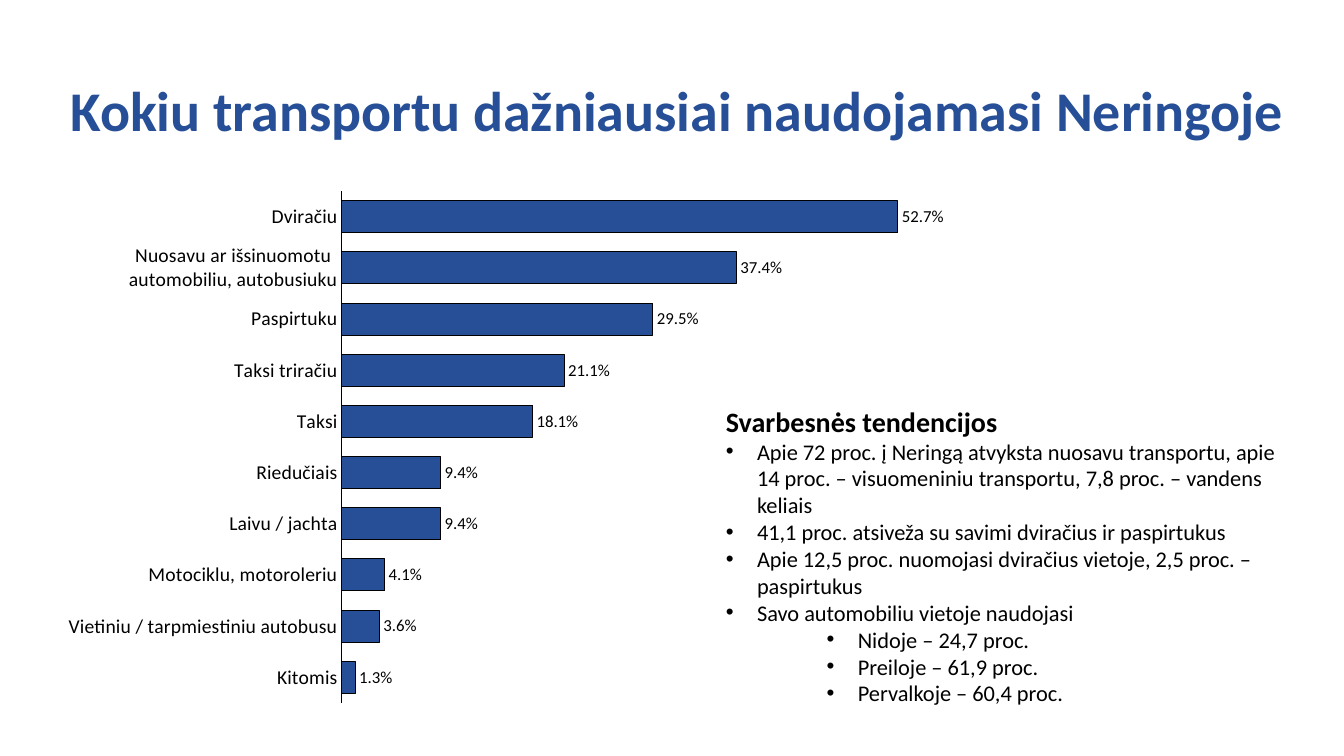
import pptx
import pptx.chart.data
import pptx.dml.color
import pptx.enum.chart
import pptx.enum.text
import pptx.oxml
import pptx.oxml.ns
import pptx.util
from dataclasses import dataclass

Inches, Pt = pptx.util.Inches, pptx.util.Pt
qn = pptx.oxml.ns.qn


@dataclass(frozen=True)
class Theme:
    font: str = "Calibri"
    blue: str = "264F97"
    black: str = "000000"
    title: int = 40
    heading: int = 20
    body: int = 16
    axis: int = 14
    label: int = 12


class SlideBuilder:
    def __init__(self, prs, theme):
        self.theme = theme
        self.s = prs.slides.add_slide(prs.slide_layouts[6])

    def style(self, font, size, color, bold=False):
        font.name = self.theme.font
        font.size = Pt(size)
        font.bold = bold
        font.color.rgb = pptx.dml.color.RGBColor.from_string(color)

    def text_box(self, left, top, width, height):
        sp = self.s.shapes.add_textbox(Inches(left), Inches(top), Inches(width), Inches(height))
        sp.text_frame.word_wrap = True
        return sp.text_frame

    def run(self, p, text, size, color, bold=False):
        r = p.add_run()
        r.text = text
        self.style(r.font, size, color, bold)

    def title(self, text, *box):
        tf = self.text_box(*box)
        tf.vertical_anchor = pptx.enum.text.MSO_ANCHOR.MIDDLE
        p = tf.paragraphs[0]
        p.line_spacing = 0.9
        self.run(p, text, self.theme.title, self.theme.blue, True)

    def bullets(self, heading, items, *box):
        t = self.theme
        tf = self.text_box(*box)
        tf.auto_size = pptx.enum.text.MSO_AUTO_SIZE.SHAPE_TO_FIT_TEXT
        self.run(tf.paragraphs[0], heading, t.heading, t.black, True)
        for level, text in items:
            p = tf.add_paragraph()
            p.level = level
            pPr = p._p.get_or_add_pPr()
            pPr.set("marL", str(Inches(0.31 + level * 0.5)))
            pPr.set("indent", str(Inches(-0.31)))
            font = pptx.oxml.parse_xml(f'<a:buFont {pptx.oxml.ns.nsdecls("a")} typeface="Arial"/>')
            char = pptx.oxml.parse_xml(f'<a:buChar {pptx.oxml.ns.nsdecls("a")} char="•"/>')
            pPr.extend([font, char])
            self.run(p, text, t.body, t.black)

    def outline(self, line):
        line.width = Pt(0.75)
        line.color.rgb = pptx.dml.color.RGBColor.from_string(self.theme.black)

    def bar_chart(self, shares, plot, *box):
        t = self.theme
        data = pptx.chart.data.CategoryChartData(number_format="0.0%")
        # Bars run upwards from the first category
        data.categories = [name for name, _ in reversed(shares)]
        data.add_series("Series 1", [value for _, value in reversed(shares)])
        chart = self.s.shapes.add_chart(
            pptx.enum.chart.XL_CHART_TYPE.BAR_CLUSTERED, *map(Inches, box), data).chart
        chart.has_legend = chart.has_title = False
        self.style(chart.font, 10, t.black)

        # Axes
        cat, val = chart.category_axis, chart.value_axis
        cat.major_tick_mark = pptx.enum.chart.XL_TICK_MARK.NONE
        self.style(cat.tick_labels.font, t.axis, t.black)
        self.outline(cat.format.line)
        val.visible = val.has_major_gridlines = False
        val.minimum_scale, val.maximum_scale = 0, 0.6

        # Bars and their labels
        bars = chart.plots[0]
        bars.gap_width = 60
        bars.vary_by_categories = False
        series = bars.series[0]
        series.format.fill.solid()
        series.format.fill.fore_color.rgb = pptx.dml.color.RGBColor.from_string(t.blue)
        self.outline(series.format.line)
        labels = series.data_labels
        labels.show_value = True
        labels.number_format = "0.0%"
        labels.number_format_is_linked = False
        labels.position = pptx.enum.chart.XL_LABEL_POSITION.OUTSIDE_END
        self.style(labels.font, t.label, t.black)

        # Fixed plot area, as fractions of the chart
        area = chart._chartSpace.find(".//" + qn("c:plotArea"))
        for old in area.findall(qn("c:layout")):
            area.remove(old)
        sizes = "".join(f'<c:{key} val="{value}"/>' for key, value in zip("xywh", plot))
        area.insert(0, pptx.oxml.parse_xml(
            f'<c:layout {pptx.oxml.ns.nsdecls("c")}><c:manualLayout>'
            '<c:layoutTarget val="inner"/><c:xMode val="edge"/><c:yMode val="edge"/>'
            f'{sizes}</c:manualLayout></c:layout>'))


SHARES = [
    ("Dviračiu", 0.527),
    ("Nuosavu ar išsinuomotu automobiliu, autobusiuku", 0.374),
    ("Paspirtuku", 0.295),
    ("Taksi triračiu", 0.211),
    ("Taksi", 0.181),
    ("Riedučiais", 0.094),
    ("Laivu / jachta", 0.094),
    ("Motociklu, motoroleriu", 0.041),
    ("Vietiniu / tarpmiestiniu autobusu", 0.036),
    ("Kitomis", 0.013),
]
TRENDS = [
    (0, "Apie 72 proc. į Neringą atvyksta nuosavu transportu, apie 14 proc. – "
        "visuomeniniu transportu, 7,8 proc. – vandens keliais"),
    (0, "41,1 proc. atsiveža su savimi dviračius ir paspirtukus"),
    (0, "Apie 12,5 proc. nuomojasi dviračius vietoje, 2,5 proc. – paspirtukus"),
    (0, "Savo automobiliu vietoje naudojasi"),
    (2, "Nidoje – 24,7 proc."),
    (2, "Preiloje – 61,9 proc."),
    (2, "Pervalkoje – 60,4 proc."),
]


def main():
    prs = pptx.Presentation()
    prs.slide_width, prs.slide_height = Inches(13.33), Inches(7.5)
    slide = SlideBuilder(prs, Theme())
    slide.title("Kokiu transportu dažniausiai naudojamasi Neringoje", 0.6, 0.4, 12.26, 1.45)
    slide.bullets("Svarbesnės tendencijos", TRENDS, 7.1, 3.96, 5.85, 3.74)
    slide.bar_chart(SHARES, (0.31, 0.02, 0.67, 0.96), 0.48, 1.79, 9.38, 5.29)
    prs.save("out.pptx")


if __name__ == "__main__":
    main()
